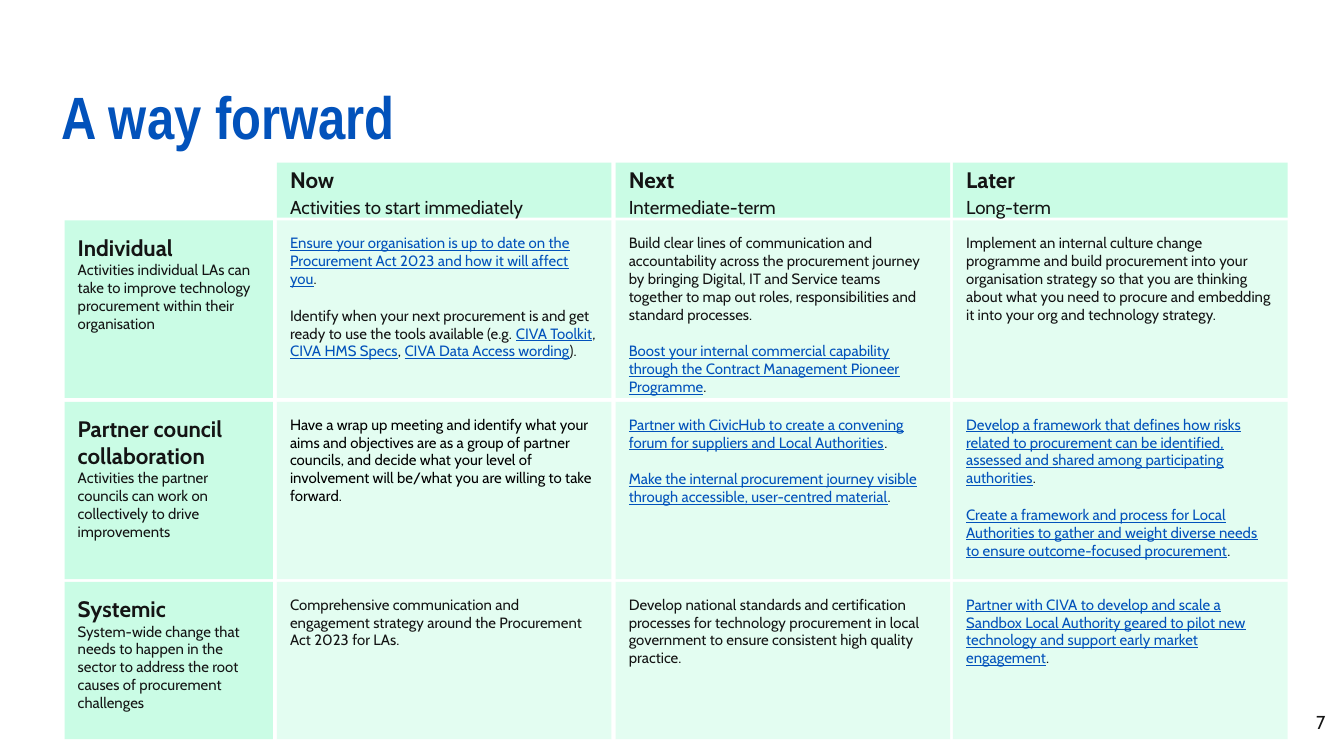
from dataclasses import dataclass

from lxml import etree
from pptx import Presentation
from pptx.dml.color import RGBColor
from pptx.enum.shapes import MSO_SHAPE
from pptx.enum.text import MSO_ANCHOR, MSO_AUTO_SIZE, PP_ALIGN
from pptx.oxml.ns import qn
from pptx.util import Inches, Pt

RECTANGLE = MSO_SHAPE.RECTANGLE
TOP, MIDDLE = MSO_ANCHOR.TOP, MSO_ANCHOR.MIDDLE
LEFT, RIGHT = PP_ALIGN.LEFT, PP_ALIGN.RIGHT
NO_AUTOFIT = MSO_AUTO_SIZE.NONE

COLORS = {"mint": "CAFCE5", "ink": "141414", "black": "000000", "blue": "0252BB"}
BODY_FONT, TITLE_FONT = "Cabin", "Arial Narrow"
TITLE_ONLY_LAYOUT = 5
LINK_MARK = "|"

SLIDE_WIDTH = Inches(10)
SLIDE_HEIGHT = SLIDE_WIDTH * 9 // 16
LABEL_LEFT, LABEL_WIDTH = 0.48, 1.55
COLUMN_LEFTS, COLUMN_WIDTH = (2.06, 4.58, 7.09), 2.49
HEADER_TOP, HEADER_HEIGHT = 1.21, 0.41
TINT_PERCENT = 51


@dataclass
class Period:
    name: str
    detail: str


@dataclass
class Level:
    name: str
    detail: str
    top: float
    height: float
    actions: list[list[str]]
    first_color: str = "ink"


PERIODS = [
    Period("Now", "Activities to start immediately"),
    Period("Next", "Intermediate-term"),
    Period("Later", "Long-term"),
]

LEVELS = [
    Level(
        "Individual",
        "Activities individual LAs can take to improve technology procurement within their organisation",
        1.64, 1.32,
        [
            ["|Ensure your organisation is up to date on the Procurement Act 2023 and how it will affect you|.",
             "Identify when your next procurement is and get ready to use the tools available "
             "(e.g. |CIVA Toolkit|, |CIVA HMS Specs|, |CIVA Data Access wording|)."],
            ["Build clear lines of communication and accountability across the procurement journey "
             "by bringing Digital, IT and Service teams together to map out roles, responsibilities "
             "and standard processes.",
             "|Boost your internal commercial capability through the Contract Management Pioneer Programme|."],
            ["Implement an internal culture change programme and build procurement into your "
             "organisation strategy so that you are thinking about what you need to procure and "
             "embedding it into your org and technology strategy."],
        ],
    ),
    Level(
        "Partner council collaboration",
        "Activities the partner councils can work on collectively to drive improvements",
        2.99, 1.32,
        [
            ["Have a wrap up meeting and identify what your aims and objectives are as a group of "
             "partner councils, and decide what your level of involvement will be/what you are "
             "willing to take forward."],
            ["|Partner with CivicHub to create a convening forum for suppliers and Local Authorities|.",
             "|Make the internal procurement journey visible through accessible, user-centred material|."],
            ["|Develop a framework that defines how risks related to procurement can be identified, "
             "assessed and shared among participating authorities|.",
             "|Create a framework and process for Local Authorities to gather and weight diverse needs "
             "to ensure outcome-focused procurement|."],
        ],
        first_color="black",
    ),
    Level(
        "Systemic",
        "System-wide change that needs to happen in the sector to address the root causes of "
        "procurement challenges",
        4.33, 1.17,
        [
            ["Comprehensive communication and engagement strategy around the Procurement Act 2023 for LAs."],
            ["Develop national standards and certification processes for technology procurement in "
             "local government to ensure consistent high quality practice."],
            ["|Partner with CIVA to develop and scale a Sandbox Local Authority geared to pilot new "
             "technology and support early market engagement|."],
        ],
    ),
]


def rgb(name: str) -> RGBColor:
    return RGBColor.from_string(COLORS[name])


def prepare_frame(frame, anchor=TOP, side_inset: float = 0.1) -> None:
    frame.word_wrap = True
    frame.auto_size = NO_AUTOFIT
    frame.vertical_anchor = anchor
    frame.margin_left = frame.margin_right = Inches(side_inset)
    frame.margin_top = frame.margin_bottom = Inches(0.1)


def write(frame, text: str, *, size: float = 8, color: str = "ink", bold: bool = False,
          font: str = BODY_FONT, align=LEFT, line_spacing: float = 1.0, before: float = 0) -> None:
    first = frame.paragraphs[0]
    paragraph = frame.add_paragraph() if first.runs else first
    paragraph.alignment = align
    paragraph.line_spacing = line_spacing
    paragraph.space_before = Pt(before)
    for index, part in enumerate(text.split(LINK_MARK)):
        if not part:
            continue
        linked = index % 2 == 1
        run = paragraph.add_run()
        run.text = part
        run.font.name = font
        run.font.size = Pt(size)
        run.font.bold = bold
        run.font.underline = linked
        run.font.color.rgb = rgb("blue" if linked else color)


def add_panel(slide, left: float, top: float, width: float, height: float,
              anchor=TOP, tinted: bool = False):
    shape = slide.shapes.add_shape(RECTANGLE, Inches(left), Inches(top), Inches(width), Inches(height))
    shape.shadow.inherit = False
    shape.line.fill.background()
    shape.fill.solid()
    shape.fill.fore_color.rgb = rgb("mint")
    if tinted:
        color = shape.element.spPr.find(qn("a:solidFill"))[0]
        etree.SubElement(color, qn("a:alpha")).set("val", str(TINT_PERCENT * 1000))
    prepare_frame(shape.text_frame, anchor)
    return shape.text_frame


def add_title(slide, text: str) -> None:
    title = slide.shapes.title
    title.left, title.top = Inches(0.46), Inches(0.49)
    title.width, title.height = Inches(7.76), Inches(0.66)
    prepare_frame(title.text_frame, side_inset=0)
    write(title.text_frame, text, size=32, color="blue", bold=True, font=TITLE_FONT)


def add_header(slide, left: float, period: Period) -> None:
    frame = add_panel(slide, left, HEADER_TOP, COLUMN_WIDTH, HEADER_HEIGHT, MIDDLE)
    write(frame, period.name, size=12, bold=True, line_spacing=1.15)
    write(frame, period.detail, size=10, line_spacing=1.15)


def add_level(slide, level: Level) -> None:
    label = add_panel(slide, LABEL_LEFT, level.top, LABEL_WIDTH, level.height)
    write(label, level.name, size=12, bold=True)
    write(label, level.detail)
    for index, (left, actions) in enumerate(zip(COLUMN_LEFTS, level.actions)):
        frame = add_panel(slide, left, level.top, COLUMN_WIDTH, level.height, tinted=True)
        color = level.first_color if index == 0 else "ink"
        for number, action in enumerate(actions):
            write(frame, action, color=color, before=10 if number else 0)


def add_page_number(slide, number: int) -> None:
    box = slide.shapes.add_textbox(Inches(9.36), Inches(5.19), Inches(0.6), Inches(0.43))
    prepare_frame(box.text_frame)
    write(box.text_frame, str(number), size=10, align=RIGHT)


def main() -> None:
    presentation = Presentation()
    presentation.slide_width, presentation.slide_height = SLIDE_WIDTH, SLIDE_HEIGHT
    slide = presentation.slides.add_slide(presentation.slide_layouts[TITLE_ONLY_LAYOUT])
    add_title(slide, "A way forward")
    add_page_number(slide, 7)
    for left, period in zip(COLUMN_LEFTS, PERIODS):
        add_header(slide, left, period)
    for level in LEVELS:
        add_level(slide, level)
    presentation.save("out.pptx")


if __name__ == "__main__":
    main()
